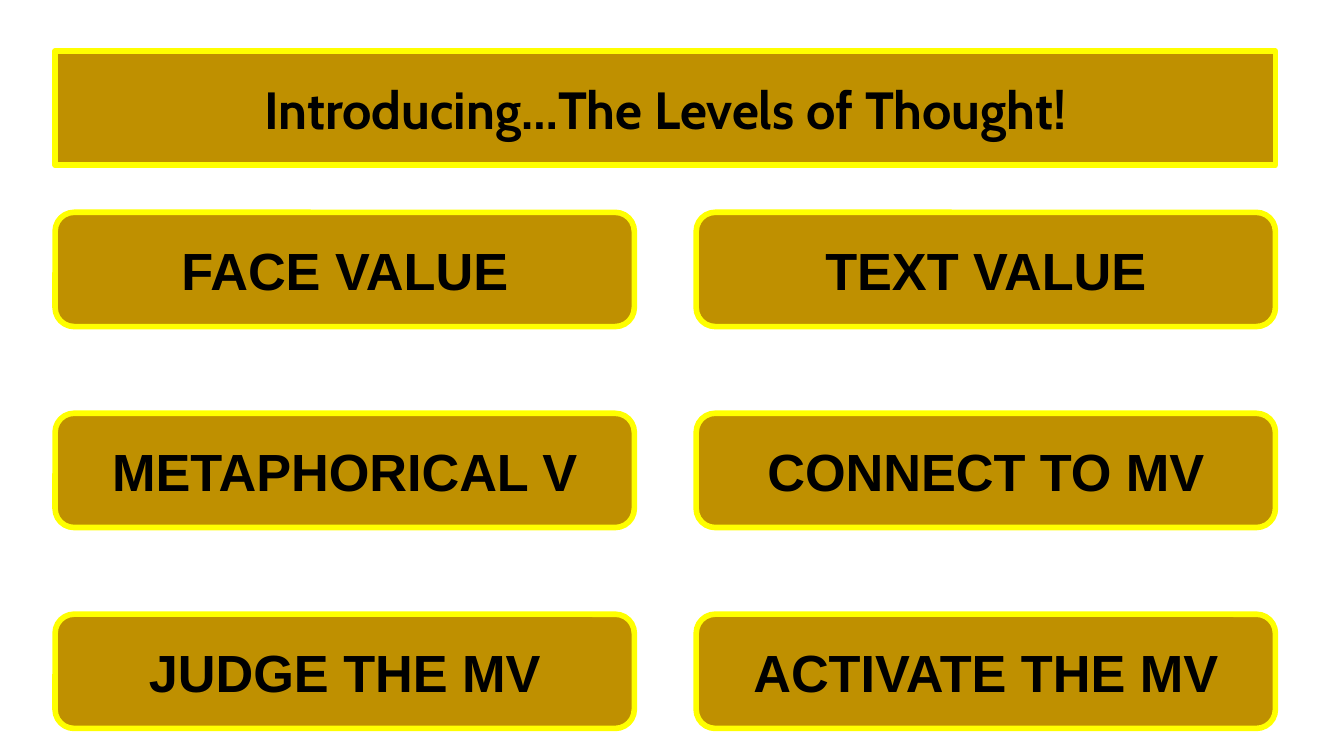
from dataclasses import dataclass

from lxml import etree
from pptx import Presentation
from pptx import util as u
from pptx.dml.color import RGBColor
from pptx.enum import shapes, text
from pptx.oxml import ns

GOLD = RGBColor(0xBF, 0x90, 0x00)
YELLOW = RGBColor(0xFF, 0xFF, 0x00)
BLACK = RGBColor(0, 0, 0)

WIDTH = 10
HEIGHT = WIDTH * 9 / 16
LEFT, COL_STEP, CARD_W = 0.41, 4.77, 4.31
TOP, LAST_TOP, CARD_H = 1.58, 4.57, 0.85
ROW_STEP = (LAST_TOP - TOP) / 2
TITLE_TOP = 0.38


@dataclass(frozen=True)
class Box:
    left: float
    top: float
    width: float
    height: float = CARD_H

    def place(self) -> tuple:
        return tuple(u.Inches(n) for n in
                     (self.left, self.top, self.width, self.height))


@dataclass(frozen=True)
class Level:
    label: str
    col: int
    row: int

    def box(self) -> Box:
        return Box(LEFT + self.col * COL_STEP, TOP + self.row * ROW_STEP, CARD_W)


LEVELS = [
    Level("FACE VALUE", 0, 0),
    Level("METAPHORICAL V", 0, 1),
    Level("JUDGE THE MV", 0, 2),
    Level("TEXT VALUE", 1, 0),
    Level("CONNECT TO MV", 1, 1),
    Level("ACTIVATE THE MV", 1, 2),
]


def paint(card) -> None:
    card.shadow.inherit = False
    card.fill.solid()
    card.fill.fore_color.rgb = GOLD
    card.line.color.rgb = YELLOW
    card.line.width = u.Pt(3)


def write(card, label: str, font: str) -> None:
    frame = card.text_frame
    frame.text = label
    frame.word_wrap = True
    frame.auto_size = text.MSO_AUTO_SIZE.NONE
    frame.vertical_anchor = text.MSO_ANCHOR.MIDDLE
    frame.margin_left = frame.margin_right = u.Inches(0.1)
    frame.margin_top = frame.margin_bottom = u.Inches(0.1)
    line = frame.paragraphs[0]
    line.alignment = text.PP_ALIGN.CENTER
    for run in line.runs:
        run.font.name = font
        run.font.size = u.Pt(28)
        run.font.bold = True
        run.font.color.rgb = BLACK


def add_level(slide, level: Level) -> None:
    card = slide.shapes.add_shape(
        shapes.MSO_SHAPE.ROUNDED_RECTANGLE, *level.box().place())
    paint(card)
    write(card, level.label, "Arial")


def set_title(slide, label: str) -> None:
    """Turn the title placeholder into a rounded card of full width."""
    title = slide.shapes.title
    box = Box(LEFT, TITLE_TOP, COL_STEP + CARD_W)
    title.left, title.top, title.width, title.height = box.place()
    shape = etree.SubElement(title.element.spPr, ns.qn("a:prstGeom"),
                             prst="roundRect")
    etree.SubElement(shape, ns.qn("a:avLst"))
    paint(title)
    write(title, label, "Cabin")


def main() -> None:
    deck = Presentation()
    deck.slide_width, deck.slide_height = u.Inches(WIDTH), u.Inches(HEIGHT)
    slide = deck.slides.add_slide(deck.slide_layouts[5])
    for level in LEVELS:
        add_level(slide, level)
    set_title(slide, "Introducing…The Levels of Thought!")
    deck.save("out.pptx")


if __name__ == "__main__":
    main()
